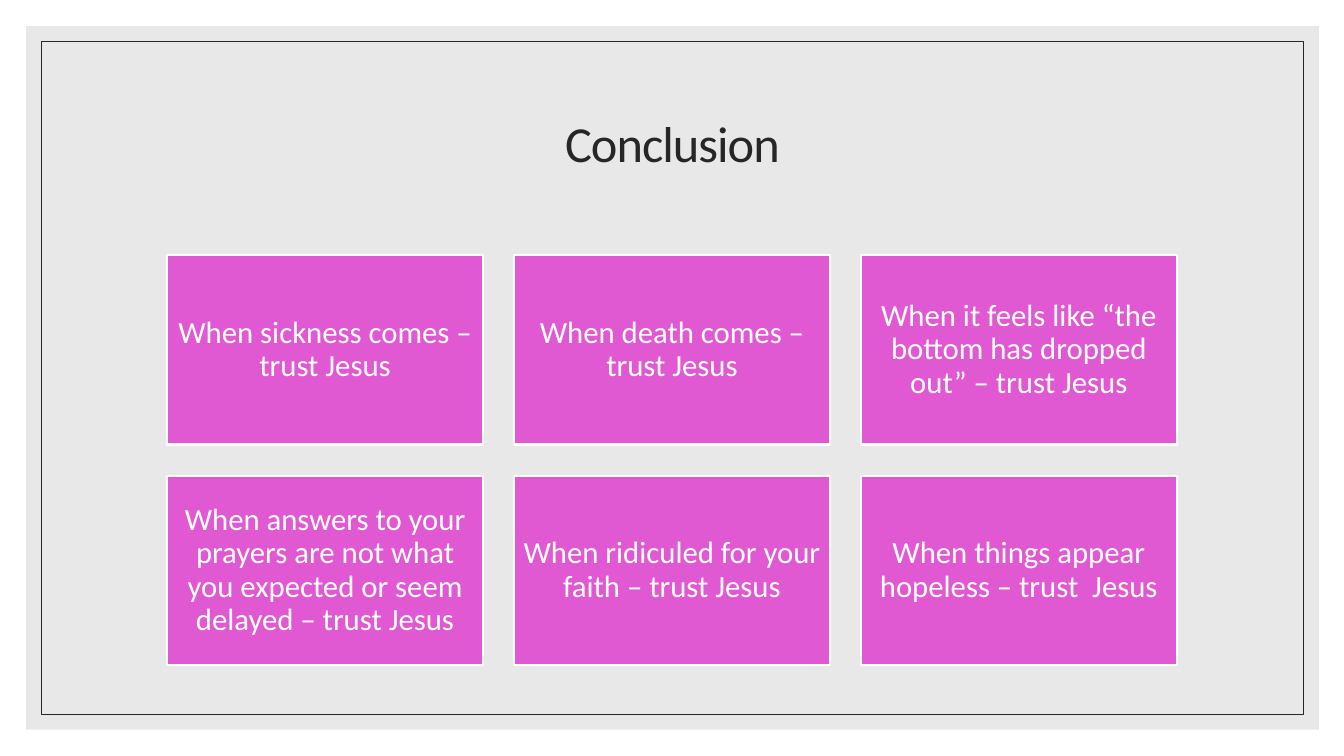
from dataclasses import dataclass

from pptx import Presentation
from pptx.dml.color import RGBColor
from pptx.enum.shapes import MSO_SHAPE as SHAPE
from pptx.enum.text import MSO_ANCHOR as ANCHOR, PP_ALIGN as ALIGN
from pptx.util import Inches, Pt


@dataclass(frozen=True)
class Theme:
    font: str = "Calibri"
    panel: str = "E8E8E8"
    ink: str = "262626"
    card: str = "E059D2"
    white: str = "FFFFFF"
    title_size: float = 36
    card_size: float = 22


THEME = Theme()

CARDS = [
    "When sickness comes – trust Jesus",
    "When death comes – trust Jesus",
    "When it feels like “the bottom has dropped out” – trust Jesus",
    "When answers to your prayers are not what you expected or seem delayed – trust Jesus",
    "When ridiculed for your faith – trust Jesus",
    "When things appear hopeless – trust  Jesus",
]
COLUMNS = 3
CARD_LEFT, CARD_TOP = 1.66, 2.53
CARD_W, CARD_H = 3.13, 1.88
GAP = 0.31


def set_all(target, formats):
    for name, value in formats.items():
        setattr(target, name, value)


def add_box(s, left, top, width, height, fill=None, line=None, line_width=0.5):
    sp = s.shapes.add_shape(SHAPE.RECTANGLE, Inches(left), Inches(top),
                            Inches(width), Inches(height))
    sp.shadow.inherit = False
    if fill:
        sp.fill.solid()
        sp.fill.fore_color.rgb = RGBColor.from_string(fill)
    else:
        sp.fill.background()
    if line:
        sp.line.color.rgb = RGBColor.from_string(line)
        sp.line.width = Pt(line_width)
    else:
        sp.line.fill.background()
    return sp


def write_text(sp, text, size, color, inset=0.09, space_after=0):
    tf = sp.text_frame
    margins = {f"margin_{side}": Inches(inset)
               for side in ("left", "top", "right", "bottom")}
    set_all(tf, {"word_wrap": True, "vertical_anchor": ANCHOR.MIDDLE, **margins})
    p = tf.paragraphs[0]
    set_all(p, {"alignment": ALIGN.CENTER, "line_spacing": 0.9,
                "space_after": Pt(space_after)})
    r = p.add_run()
    r.text = text
    set_all(r.font, {"name": THEME.font, "size": Pt(size)})
    r.font.color.rgb = RGBColor.from_string(color)
    return r


def add_title(s, text):
    sp = s.shapes.add_textbox(Inches(1.17), Inches(0.7), Inches(11), Inches(1.5))
    r = write_text(sp, text, THEME.title_size, THEME.ink)
    # Tighter letter spacing, in hundredths of a point
    r.font._element.set("spc", "-70")


def add_card(s, index, text):
    row, col = divmod(index, COLUMNS)
    sp = add_box(s, CARD_LEFT + col * (CARD_W + GAP), CARD_TOP + row * (CARD_H + GAP),
                 CARD_W, CARD_H, THEME.card, THEME.white, 1.5)
    write_text(sp, text, THEME.card_size, THEME.white)


def main():
    prs = Presentation()
    set_all(prs, {"slide_width": Inches(13.33), "slide_height": Inches(7.5)})
    s = prs.slides.add_slide(prs.slide_layouts[6])

    # Background panel and thin frame
    add_box(s, 0.26, 0.26, 12.82, 6.98, fill=THEME.panel)
    add_box(s, 0.41, 0.41, 12.52, 6.68, line=THEME.ink)

    # Title
    add_title(s, "Conclusion")

    # Grid of cards
    for index, text in enumerate(CARDS):
        add_card(s, index, text)

    prs.save("out.pptx")


if __name__ == "__main__":
    main()
